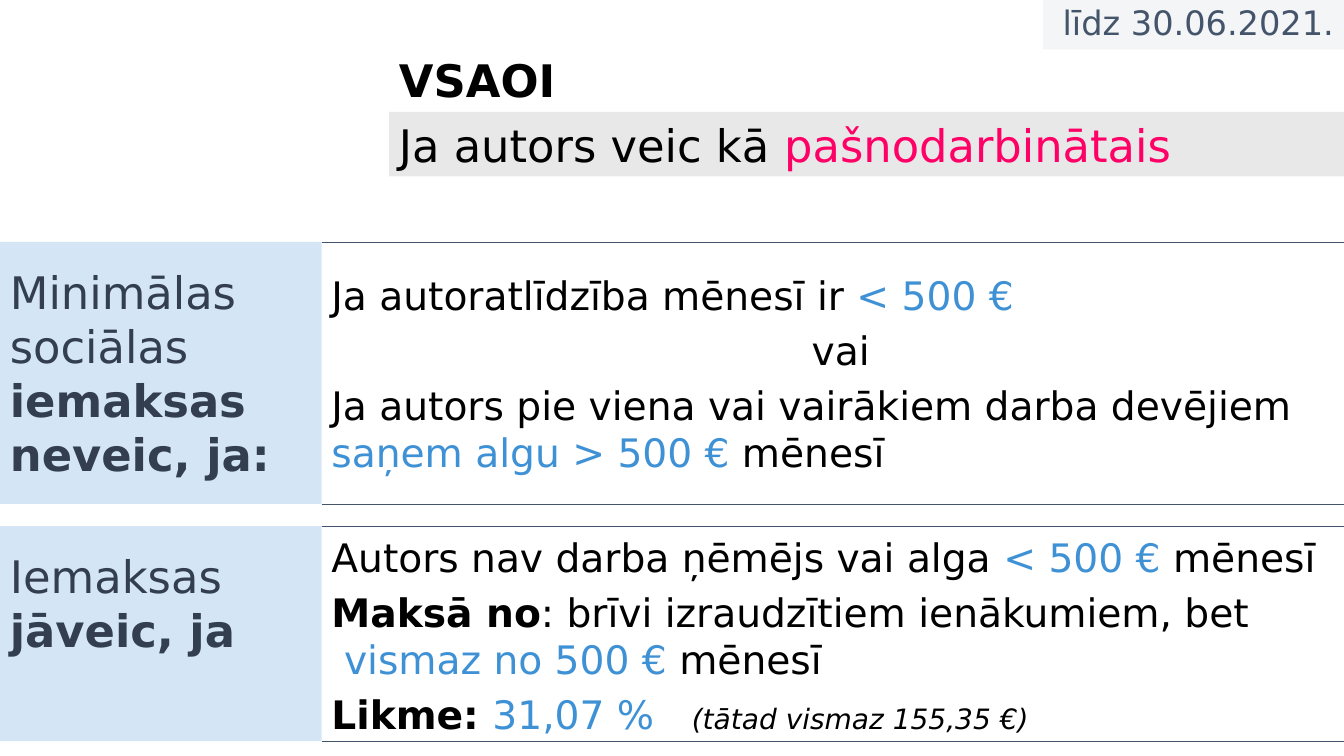
from lxml.etree import SubElement
from pptx import Presentation
from pptx.dml.color import RGBColor
from pptx.enum.shapes import MSO_CONNECTOR, MSO_SHAPE
from pptx.enum.text import MSO_ANCHOR, PP_ALIGN
from pptx.oxml.ns import qn
from pptx.util import Pt

BLACK = RGBColor(0x00, 0x00, 0x00)
BLUE = RGBColor(0x3F, 0x91, 0xD5)
PINK = RGBColor(0xFF, 0x00, 0x66)
NAVY = RGBColor(0x33, 0x3F, 0x50)
SLATE = RGBColor(0x44, 0x54, 0x6A)
PALE = RGBColor(0xD6, 0xDC, 0xE5)
GREY = RGBColor(0xE7, 0xE6, 0xE6)

W, H = 960, 540
SPLIT = 229.7   # edge between the label column and the rule lines
HEAD_X = 277.9
HANG = 9
NOTE_TAB = 257.4

prs = Presentation()
prs.slide_width, prs.slide_height = Pt(W), Pt(H)
s = prs.slides.add_slide(prs.slide_layouts[6])


def add_text(p, text, size=28, color=BLACK, bold=False, italic=False):
    r = p.add_run()
    r.text = text
    f = r.font
    f.name, f.size, f.bold, f.italic = "DejaVu Sans", Pt(size), bold, italic
    f.color.rgb = color


def add_box(x, y, w, h, fill=None, alpha=100, anchor=MSO_ANCHOR.MIDDLE):
    if fill is None:
        sp = s.shapes.add_textbox(Pt(x), Pt(y), Pt(w), Pt(h))
    else:
        sp = s.shapes.add_shape(MSO_SHAPE.RECTANGLE, Pt(x), Pt(y), Pt(w), Pt(h))
        sp.shadow.inherit = False
        sp.line.fill.background()
        sp.fill.solid()
        sp.fill.fore_color.rgb = fill
        clr = sp.fill._xPr.find(qn("a:solidFill"))[0]
        SubElement(clr, qn("a:alpha"), val=str(alpha * 1000))
    tf = sp.text_frame
    tf.word_wrap = True
    tf.vertical_anchor = anchor
    tf.paragraphs[0].alignment = PP_ALIGN.LEFT
    return tf


# Title
p = add_box(HEAD_X, 35.3, 632, 47.5).paragraphs[0]
p.line_spacing = 0.9
add_text(p, "VSAOI", 32, bold=True)

# Rows: top, bottom, text top, label, paragraphs of (text, format)
blue = {"color": BLUE}
rows = [
    (172.8, 360, 188.6, ("Minimālas sociālas ", "iemaksas neveic, ja:"), [
        [("Ja autoratlīdzība mēnesī ir ", {}), ("< 500 €", blue)],
        [("vai", {})],
        [("Ja autors pie viena vai vairākiem darba devējiem ", {}),
         ("saņem algu > 500 € ", blue), ("mēnesī", {})],
    ]),
    (375.8, 529.5, 375.8, ("Iemaksas ", "jāveic, ja"), [
        [("Autors nav darba ņēmējs vai alga ", {}), ("< 500 € ", blue), ("mēnesī", {})],
        [("Maksā no", {"bold": True}), (": brīvi izraudzītiem ienākumiem, bet\v", {}),
         ("vismaz no 500 € ", blue), ("mēnesī", {})],
        [("Likme: ", {"bold": True}), ("31,07\u00a0%\t".replace("\u00a0", " "), blue),
         ("(tātad vismaz 155,35 €)", {"size": 20, "italic": True})],
    ]),
]
for top, bottom, text_top, (plain, strong), paragraphs in rows:
    # Label
    tf = add_box(0, top, SPLIT, bottom - top, BLUE, 22, MSO_ANCHOR.TOP)
    tf.margin_top = Pt(16.5)
    add_text(tf.paragraphs[0], plain, 32, NAVY)
    add_text(tf.paragraphs[0], strong, 32, NAVY, bold=True)

    # Conditions
    tf = add_box(SPLIT, text_top, 741.6, 156.2)
    for i, runs in enumerate(paragraphs):
        p = tf.paragraphs[0] if i == 0 else tf.add_paragraph()
        pPr = p._p.get_or_add_pPr()
        if runs[0][0] == "Maksā no":
            pPr.set("marL", str(Pt(HANG)))
            pPr.set("indent", str(-Pt(HANG)))
        if runs[0][0] == "Likme: ":
            tabs = SubElement(pPr, qn("a:tabLst"))
            SubElement(tabs, qn("a:tab"), pos=str(Pt(NOTE_TAB)), algn="l")
        if i:
            p.space_before = Pt(5.6)
        p.alignment = PP_ALIGN.CENTER if runs[0][0] == "vai" else PP_ALIGN.LEFT
        for text, fmt in runs:
            # A line break inside a run starts a new line
            head, brk, _ = text.partition("\v")
            add_text(p, head, **fmt)
            if brk:
                p.add_line_break()

    # Rule lines
    for y in (top, bottom):
        c = s.shapes.add_connector(MSO_CONNECTOR.STRAIGHT, Pt(SPLIT), Pt(y), Pt(W), Pt(y))
        c.line.color.rgb = SLATE
        c.line.width = Pt(0.5)
        SubElement(c._element.spPr, qn("a:effectLst"))

# Date tag
p = add_box(745.2, -0.7, W - 745.2, 36, PALE, 28).paragraphs[0]
p.alignment = PP_ALIGN.RIGHT
p.line_spacing = 0.9
add_text(p, "līdz 30.06.2021.", 24, SLATE)

# Subtitle bar
p = add_box(HEAD_X, 79.9, W - HEAD_X, 46.1, GREY, 90).paragraphs[0]
add_text(p, "Ja autors veic kā ", 32)
add_text(p, "pašnodarbinātais", 32, PINK)

prs.save("out.pptx")
